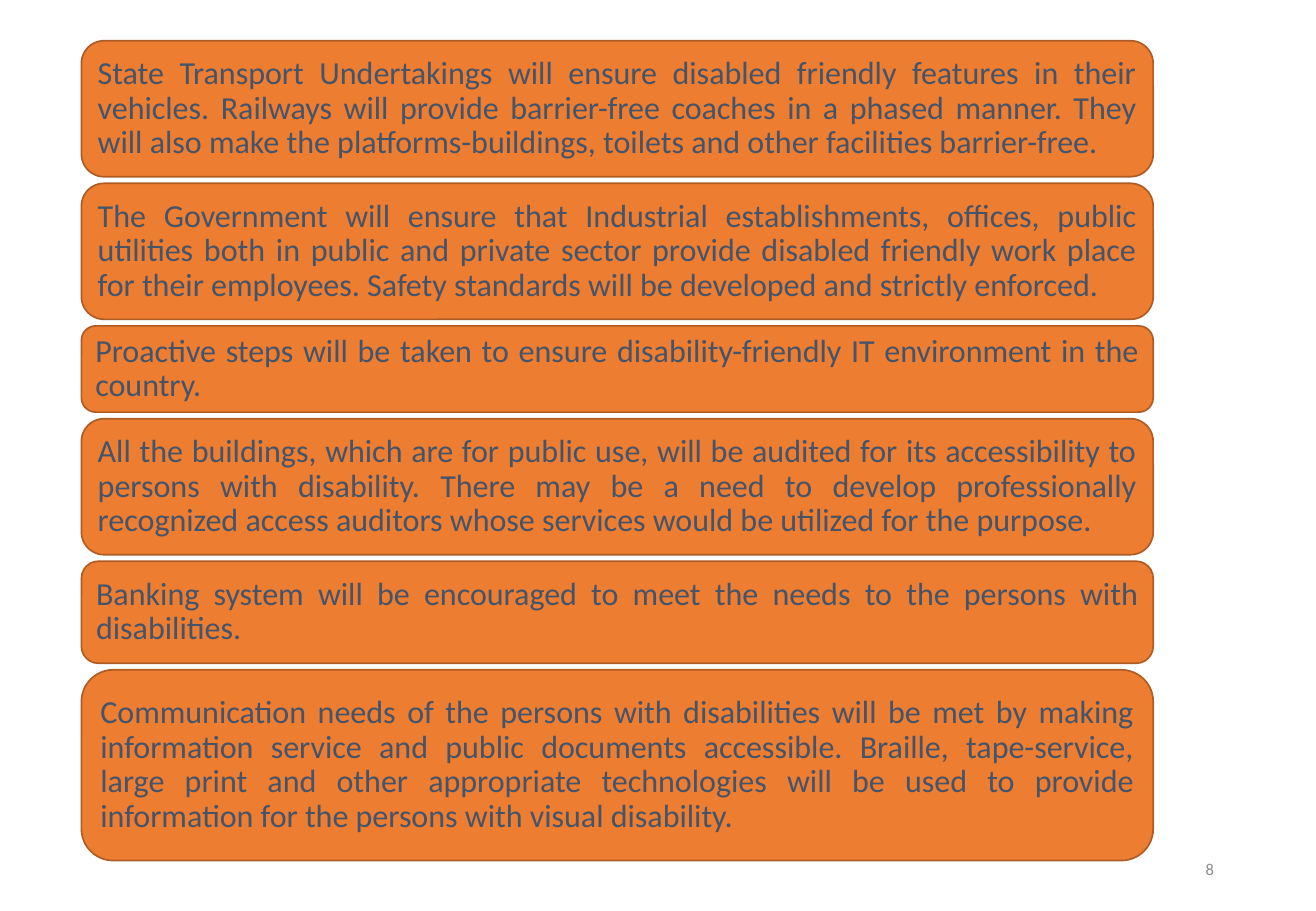
import dataclasses

import pptx
import pptx.dml.color
import pptx.enum.shapes
import pptx.enum.text
import pptx.util


@dataclasses.dataclass(frozen=True)
class Theme:
    """Colours, type and grid size of the slide."""
    font: str = "Calibri"
    box_fill: str = "ED7D31"
    box_line: str = "AF5C24"
    box_text: str = "44546A"
    number_text: str = "8C8C8C"
    box_size: float = 19
    number_size: float = 9.8
    line_width: float = 1
    cell: float = 0.05


class SlideBuilder:
    """Places styled elements on the current slide by grid cells."""

    def __init__(self, slide, theme):
        """Keep the slide and its theme."""
        self.slide = slide
        self.theme = theme

    def grid(self, *cells):
        """Turn grid cells into lengths."""
        return [pptx.util.Inches(cell * self.theme.cell) for cell in cells]

    def colour(self, value):
        """Turn a hex value into a colour."""
        return pptx.dml.color.RGBColor.from_string(value)

    def apply(self, target, formats):
        """Set every attribute named in the formats."""
        for name, value in formats.items():
            setattr(target, name, value)

    def add_text(self, shape, text, size, colour, frame_formats, paragraph_formats):
        """Fill a shape with one styled paragraph."""
        frame = shape.text_frame
        self.apply(frame, {"word_wrap": True,
                           "vertical_anchor": pptx.enum.text.MSO_ANCHOR.MIDDLE,
                           **frame_formats})
        paragraph = frame.paragraphs[0]
        self.apply(paragraph, paragraph_formats)
        run = paragraph.add_run()
        run.text = text
        self.apply(run.font, {"name": self.theme.font, "size": pptx.util.Pt(size)})
        run.font.color.rgb = self.colour(colour)

    def statement(self, text, left, top, width, height):
        """Add a rounded box with a justified statement."""
        kind = pptx.enum.shapes.MSO_SHAPE.ROUNDED_RECTANGLE
        shape = self.slide.shapes.add_shape(kind, *self.grid(left, top, width, height))
        shape.shadow.inherit = False
        shape.fill.solid()
        shape.fill.fore_color.rgb = self.colour(self.theme.box_fill)
        shape.line.color.rgb = self.colour(self.theme.box_line)
        shape.line.width = pptx.util.Pt(self.theme.line_width)
        side, edge = pptx.util.Inches(0.08), pptx.util.Inches(0.04)
        self.add_text(shape, text, self.theme.box_size, self.theme.box_text,
                      {"margin_left": side, "margin_right": side,
                       "margin_top": edge, "margin_bottom": edge},
                      {"alignment": pptx.enum.text.PP_ALIGN.JUSTIFY, "line_spacing": 0.9})

    def page_number(self, text, left, top, width, height):
        """Add the right-aligned page number."""
        shape = self.slide.shapes.add_textbox(*self.grid(left, top, width, height))
        self.add_text(shape, text, self.theme.number_size, self.theme.number_text,
                      {}, {"alignment": pptx.enum.text.PP_ALIGN.RIGHT})


STATEMENTS = [
    (22.4, "State Transport Undertakings will ensure disabled friendly features in "
           "their vehicles. Railways will provide barrier-free coaches in a phased "
           "manner. They will also make the platforms-buildings, toilets and other "
           "facilities barrier-free."),
    (22.4, "The Government will ensure that Industrial establishments, offices, "
           "public utilities both in public and private sector provide disabled "
           "friendly work place for their employees. Safety standards will be "
           "developed and strictly enforced."),
    (14.2, "Proactive steps will be taken to ensure disability-friendly IT "
           "environment in the country."),
    (22.4, "All the buildings, which are for public use, will be audited for its "
           "accessibility to persons with disability. There may be a need to develop "
           "professionally recognized access auditors whose services would be "
           "utilized for the purpose."),
    (16.8, "Banking system will be encouraged to meet the needs to the persons with "
           "disabilities."),
    (31.4, "Communication needs of the persons with disabilities will be met by "
           "making information service and public documents accessible. Braille, "
           "tape-service, large print and other appropriate technologies will be "
           "used to provide information for the persons with visual disability."),
]


def main():
    """Build and save the slide."""
    presentation = pptx.Presentation()
    presentation.slide_width = pptx.util.Inches(10.83)
    presentation.slide_height = pptx.util.Inches(7.5)
    slide = presentation.slides.add_slide(presentation.slide_layouts[6])
    builder = SlideBuilder(slide, Theme())
    left, top, width, gap = 13.4, 6.7, 176.4, 1.08
    for height, text in STATEMENTS:
        builder.statement(text, left, top, width, height)
        top += height + gap
    builder.page_number("8", 153, 139, 48.8, 8)
    presentation.save("out.pptx")


if __name__ == "__main__":
    main()
